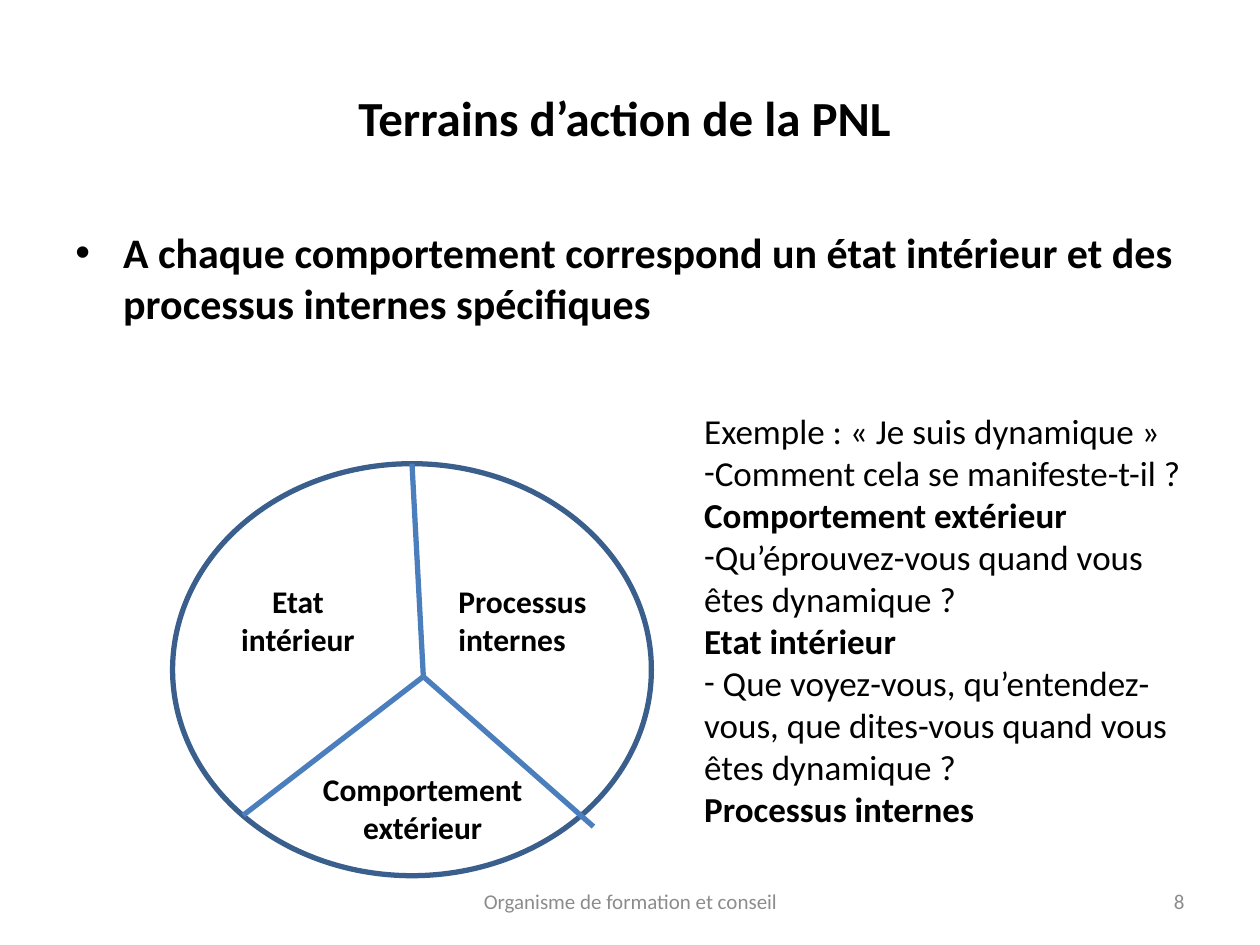
from pptx import Presentation
from pptx.dml.color import RGBColor
from pptx.enum.shapes import MSO_CONNECTOR as CONN, MSO_SHAPE as SHAPE
from pptx.enum.text import MSO_ANCHOR as ANCHOR, PP_ALIGN as ALIGN
from pptx.oxml.ns import qn
from pptx.util import Inches, Pt
from lxml.etree import SubElement

BLACK = RGBColor(0x00, 0x00, 0x00)
GREY = RGBColor(0x8C, 0x8C, 0x8C)
WHITE = RGBColor(0xFF, 0xFF, 0xFF)
DARK_BLUE = RGBColor(0x3A, 0x5F, 0x8C)
BLUE = RGBColor(0x4B, 0x7E, 0xBC)
WIDTH, HEIGHT = Inches(10), Inches(7.5)
FONT = "Calibri"
DASH = "-"


def share(x, y):
    return round(WIDTH * x / 100), round(HEIGHT * y / 100)


def add_bullet(p, char, indent):
    pPr = p._p.get_or_add_pPr()
    pPr.set("marL", str(indent))
    pPr.set("indent", str(-indent))
    SubElement(pPr, qn("a:buFont")).set("typeface", "Arial" if indent else FONT)
    SubElement(pPr, qn("a:buChar")).set("char", char)


def add_text(slide, at, paragraphs, size=18, bold=False, color=BLACK,
             align=ALIGN.LEFT, anchor=ANCHOR.TOP, indent=0, before=0):
    x, y, w, h = at
    tf = slide.shapes.add_textbox(*share(x, y), *share(w, h)).text_frame
    tf.word_wrap = True
    tf.vertical_anchor = anchor
    for i, (bullet, *runs) in enumerate(paragraphs):
        p = tf.paragraphs[0] if i == 0 else tf.add_paragraph()
        p.alignment = align
        p.space_before = Pt(before)
        if bullet:
            add_bullet(p, bullet, indent)
        for text, strong in runs:
            r = p.add_run()
            r.text = text
            r.font.name = FONT
            r.font.size = Pt(size)
            r.font.bold = bold or strong
            r.font.color.rgb = color


def plain(*lines):
    return [(None, (line, False)) for line in lines]


def add_ellipse(slide, x, y, w, h):
    sp = slide.shapes.add_shape(SHAPE.OVAL, *share(x, y), *share(w, h))
    sp.shadow.inherit = False
    sp.fill.solid()
    sp.fill.fore_color.rgb = WHITE
    sp.line.color.rgb = DARK_BLUE
    sp.line.width = Pt(3)
    return sp


def add_line(slide, start, end):
    line = slide.shapes.add_connector(CONN.STRAIGHT, *share(*start), *share(*end))
    line.line.color.rgb = BLUE
    line.line.width = Pt(3)
    SubElement(line._element.spPr, qn("a:effectLst"))
    return line


def add_wheel(slide):
    ellipse = add_ellipse(slide, 13.7, 49.07, 38, 43.6)
    hub, top = (33.6, 71.6), (32.7, 49.07)
    for end in ((19.3, 86.27), (47.1, 87.47)):
        add_line(slide, hub, end)
    add_line(slide, hub, top).end_connect(ellipse, 0)
    add_text(slide, (16.4, 60.93, 14.5, 11.87), plain("Etat", "intérieur"),
             bold=True, align=ALIGN.CENTER)
    add_text(slide, (35.4, 60.93, 15.4, 11.87), plain("Processus", "internes"),
             bold=True)
    add_text(slide, (21.8, 80.8, 23.5, 11.87), plain("Comportement extérieur"),
             bold=True, align=ALIGN.CENTER)


def add_example(slide):
    add_text(slide, (54.9, 42.67, 40.8, 46.27), [
        (None, ("Exemple : « Je suis dynamique »", False)),
        (DASH, ("Comment cela se manifeste-t-il ? ", False),
         ("Comportement extérieur", True)),
        (DASH, ("Qu’éprouvez-vous quand vous êtes dynamique ?", False)),
        (None, ("Etat intérieur", True)),
        (DASH, (" Que voyez-vous, qu’entendez-vous, que dites-vous quand vous "
                "êtes dynamique ?", False)),
        (None, ("Processus internes", True)),
    ], size=20)


def main():
    prs = Presentation()
    prs.slide_width, prs.slide_height = WIDTH, HEIGHT
    slide = prs.slides.add_slide(prs.slide_layouts[6])
    add_text(slide, (5, 4, 90, 16.67), plain("Terrains d’action de la PNL "),
             size=28, bold=True, align=ALIGN.CENTER, anchor=ANCHOR.MIDDLE)
    footer = {"size": 12, "color": GREY, "anchor": ANCHOR.MIDDLE}
    add_text(slide, (34.2, 92.67, 31.7, 5.33),
             plain("Organisme de formation et conseil"), align=ALIGN.CENTER, **footer)
    add_text(slide, (71.7, 92.67, 23.3, 5.33), plain("8"), align=ALIGN.RIGHT, **footer)
    add_text(slide, (5, 23.33, 90, 66), [
        ("•", ("A chaque comportement correspond un état intérieur et des "
               "processus internes spécifiques", True)),
    ], size=24, indent=Inches(0.38), before=4.8)
    add_example(slide)
    add_wheel(slide)
    prs.save("out.pptx")


if __name__ == "__main__":
    main()
